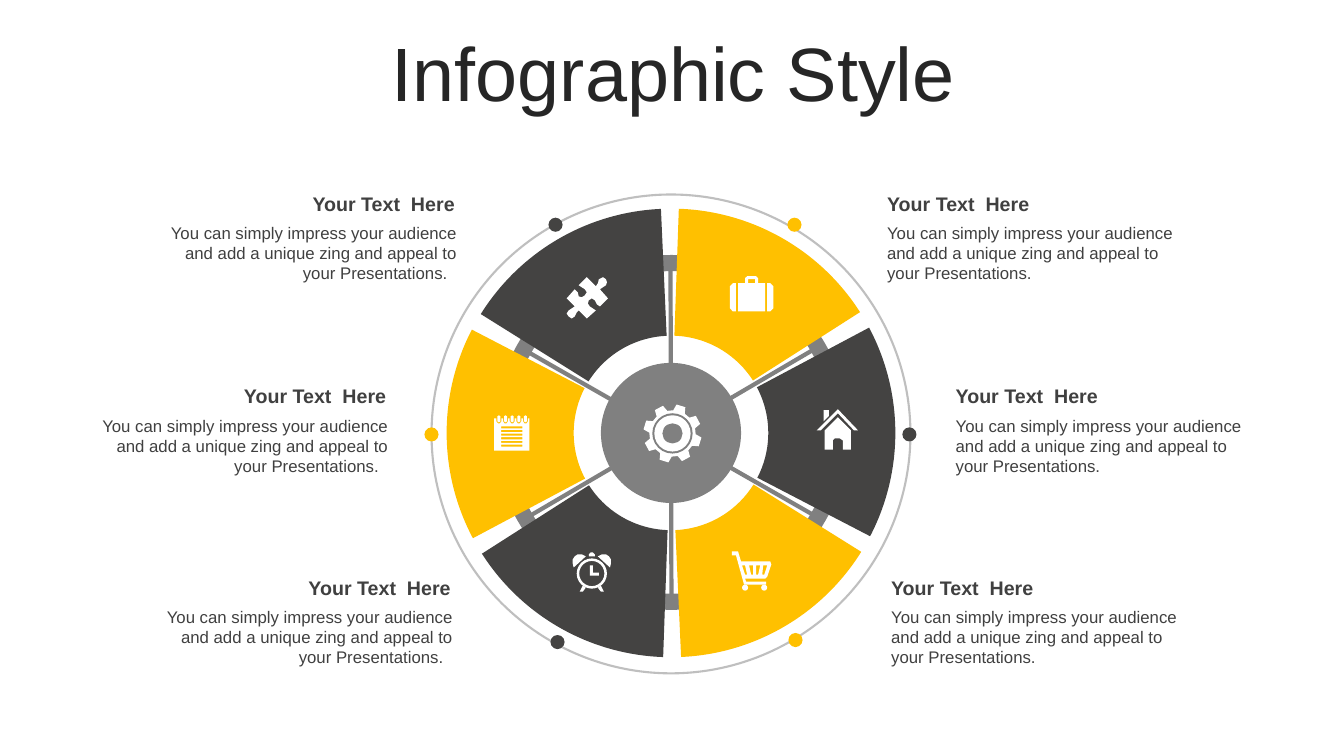
from math import cos, radians, sin

from lxml import etree
from pptx import Presentation
from pptx.dml.color import RGBColor
from pptx.enum.shapes import MSO_CONNECTOR, MSO_SHAPE
from pptx.enum.text import MSO_ANCHOR, MSO_AUTO_SIZE, PP_ALIGN
from pptx.oxml.ns import qn
from pptx.util import Pt

PX = 9144  # EMU per px: 100 px to the inch
OVAL, DONUT, BLOCK_ARC = MSO_SHAPE.OVAL, MSO_SHAPE.DONUT, MSO_SHAPE.BLOCK_ARC
STRAIGHT = MSO_CONNECTOR.STRAIGHT
LEFT, RIGHT, CENTER = PP_ALIGN.LEFT, PP_ALIGN.RIGHT, PP_ALIGN.CENTER
MIDDLE = MSO_ANCHOR.MIDDLE
FIT_SHAPE, NO_FIT = MSO_AUTO_SIZE.SHAPE_TO_FIT_TEXT, MSO_AUTO_SIZE.NONE

YELLOW = RGBColor(0xFF, 0xC0, 0x00)
DARK = RGBColor(0x44, 0x43, 0x42)
GREY = RGBColor(0x80, 0x80, 0x80)
PALE = RGBColor(0xBF, 0xBF, 0xBF)
WHITE = RGBColor(0xFF, 0xFF, 0xFF)
TITLE_INK = RGBColor(0x26, 0x26, 0x26)
TEXT_INK = RGBColor(0x40, 0x40, 0x40)

HEADING = "Your Text  Here"
BODY = ("You can simply impress your audience and add a unique zing "
        "and appeal to your Presentations.")
# Left edge, top edge and alignment of each caption
CAPTIONS = [(154, 185, RIGHT), (870, 185, LEFT), (86, 376, RIGHT),
            (938, 376, LEFT), (150, 566, RIGHT), (874, 566, LEFT)]
DOTS = [(421, 424, YELLOW), (546, 630, DARK), (782, 628, YELLOW),
        (895, 424, DARK), (781, 216, YELLOW), (544, 216, DARK)]
SPOKES = [(518, 346, 814, 515), (665, 260, 666, 605), (810, 345, 520, 515)]

PUZZLE = [[
    (598, 275), (601, 277), (602, 280), (601, 283), (598, 285), (595, 287),
    (603, 296), (595, 304), (592, 302), (590, 298), (587, 296), (584, 298),
    (583, 301), (585, 304), (591, 308), (582, 316), (574, 308), (572, 310),
    (570, 314), (567, 316), (564, 314), (562, 311), (564, 308), (567, 306),
    (570, 304), (562, 296), (570, 287), (573, 290), (574, 294), (577, 295),
    (580, 293), (582, 290), (580, 287), (574, 283), (582, 275), (591, 284),
    (593, 281), (594, 277)]]
BRIEFCASE = [
    [(761, 281), (764, 281), (767, 284), (767, 306), (764, 309), (761, 309)],
    [(730, 281), (727, 281), (724, 284), (724, 306), (727, 309), (730, 309)],
    [(741, 274), (750, 274), (752, 276), (752, 281), (759, 281), (759, 309),
     (732, 309), (732, 281), (739, 281), (739, 276)],
    [(742, 277), (749, 277), (749, 281), (742, 281)]]
HOUSE = [
    [(831, 414), (844, 427), (844, 446), (836, 446), (836, 437), (833, 435),
     (828, 435), (826, 437), (826, 446), (818, 446), (818, 427)],
    [(817, 407), (822, 407), (822, 413), (817, 418)],
    [(831, 406), (851, 427), (847, 427), (831, 410), (814, 427), (810, 427)]]
CART = [
    [(732, 547), (735, 557), (764, 557), (765, 560), (761, 572), (759, 574),
     (739, 574), (740, 577), (760, 577), (760, 580), (738, 580), (730, 551),
     (726, 551), (726, 547)],
    [(757, 561), (756, 570), (758, 570), (761, 561)],
    [(750, 561), (750, 570), (752, 570), (754, 561)],
    [(743, 561), (745, 570), (747, 570), (747, 561)],
    [(736, 561), (739, 570), (741, 570), (739, 561)]]
CLOCK_HANDS = [(585, 561), (588, 561), (588, 568), (594, 568), (594, 571), (585, 571)]
CLOCK_KNOB = [(586, 548), (588, 548), (590, 550), (590, 552), (584, 552), (584, 550)]
CLOCK_FOOT = [(593, 583), (596, 587), (599, 587), (596, 581)]
CLOCK_EAR = [(593, 552), (597, 550), (601, 550), (604, 552), (606, 555),
             (606, 559), (605, 563)]


def px(length):
    return round(length * PX)


def mirrored(points, axis):
    return [(2 * axis - x, y) for x, y in points]


def clock():
    contours = [CLOCK_HANDS, CLOCK_KNOB]
    for part in (CLOCK_FOOT, CLOCK_EAR):
        contours += [part, mirrored(part, 587)]
    return contours


def notepad():
    page, rings, lines = [(490, 415)], [], []
    for i in range(5):
        x = 494.8 + 6.6 * i
        page += [(x - 2.5, 415), (x - 2.5, 418), (x - 1, 420),
                 (x + 1, 420), (x + 2.5, 418), (x + 2.5, 415)]
        rings.append([(x, 412), (x + 1.5, 413), (x + 1.5, 418),
                      (x, 419), (x - 1.5, 418), (x - 1.5, 413)])
    page += [(525, 415), (525, 447), (490, 447)]
    for i in range(6):
        top = 423 + 3.6 * i
        lines.append([(497, top), (518, top), (518, top + 2), (497, top + 2)])
    return [page, *rings, *lines]


def gear():
    x, y, teeth = 667, 430, 8
    rim = []
    for tooth in range(teeth):
        middle = -73 + tooth * 360 / teeth
        for radius, offset in ((23, -15), (29, -9), (29, 9), (23, 15)):
            angle = radians(middle + offset)
            rim.append((x + radius * cos(angle), y + radius * sin(angle)))
    return [rim]


def paint(shape, fill):
    shape.shadow.inherit = False
    shape.fill.solid()
    shape.fill.fore_color.rgb = fill
    shape.line.fill.background()


def add_round(slide, kind, left, top, size, fill):
    shape = slide.shapes.add_shape(kind, px(left), px(top), px(size), px(size))
    paint(shape, fill)
    return shape


def add_icon(slide, contours):
    """Draw closed contours as one shape; a contour inside another is a hole."""
    scaled = [[(px(x), px(y)) for x, y in contour] for contour in contours]
    builder = slide.shapes.build_freeform(*scaled[0][0])
    builder.add_line_segments(scaled[0][1:], close=True)
    for contour in scaled[1:]:
        builder.move_to(*contour[0])
        builder.add_line_segments(contour[1:], close=True)
    paint(builder.convert_to_shape(), WHITE)


def add_icons(slide):
    for icon in (clock(), notepad(), PUZZLE, CART, HOUSE, BRIEFCASE, gear()):
        add_icon(slide, icon)
    add_round(slide, DONUT, 572, 554, 30, WHITE).adjustments[0] = 2.5 / 30
    for wheel_left in (736, 755):
        add_round(slide, OVAL, wheel_left, 580, 6, WHITE)
    for size, color in ((40, GREY), (36, WHITE), (20, GREY)):
        add_round(slide, OVAL, 667 - size // 2, 430 - size // 2, size, color)


def add_spoke(slide, *ends):
    spoke = slide.shapes.add_connector(STRAIGHT, *map(px, ends))
    spoke.line.color.rgb = GREY
    spoke.line.width = Pt(3)
    etree.SubElement(spoke._element.spPr, qn("a:effectLst"))


def write(frame, text, size, color, align, bold=False):
    frame.word_wrap = True
    frame.text = text
    para = frame.paragraphs[0]
    para.alignment = align
    font = para.runs[0].font
    font.name, font.size, font.bold = "Arial", Pt(size), bold
    font.color.rgb = color


def add_text(slide, left, top, width, height, text, size, align, bold=False):
    box = slide.shapes.add_textbox(px(left), px(top), px(width), px(height))
    write(box.text_frame, text, size, TEXT_INK, align, bold)
    box.text_frame.auto_size = FIT_SHAPE


def add_caption(slide, left, top, align):
    body = BODY + "  " if align == RIGHT else BODY
    add_text(slide, left, top + 31, 309, 71, body, 12, align)
    add_text(slide, left, top, 307, 34, HEADING, 14, align, bold=True)


def set_title(slide, text):
    title = slide.shapes.title
    title.left, title.top, title.width, title.height = map(px, (35, 37, 1266, 79))
    frame = title.text_frame
    write(frame, text, 54, TITLE_INK, CENTER)
    frame.auto_size = NO_FIT
    frame.vertical_anchor = MIDDLE
    frame.paragraphs[0].line_spacing = 0.9


def add_wheel(slide):
    orbit = add_round(slide, OVAL, 428, 193, 475, WHITE)
    orbit.fill.background()
    orbit.line.color.rgb = PALE
    orbit.line.width = Pt(1.5)
    for left, top, color in DOTS:
        add_round(slide, OVAL, left, top, 14, color)
    for ends in SPOKES:
        add_spoke(slide, *ends)
    add_round(slide, OVAL, 596, 360, 139, GREY)
    add_round(slide, DONUT, 490, 253, 352, GREY).adjustments[0] = 16 / 352
    for i in range(6):
        wedge = add_round(slide, BLOCK_ARC, 443, 207, 445, DARK if i % 2 else YELLOW)
        wedge.rotation = (332 - 60 * i) % 360
        for index, value in enumerate((108, 141.25, 126 / 445)):
            wedge.adjustments[index] = value


def main():
    deck = Presentation()
    deck.slide_width, deck.slide_height = px(1333), px(750)
    slide = deck.slides.add_slide(deck.slide_layouts[5])
    set_title(slide, "Infographic Style")
    add_wheel(slide)
    for caption in CAPTIONS:
        add_caption(slide, *caption)
    add_icons(slide)
    deck.save("out.pptx")


if __name__ == "__main__":
    main()
